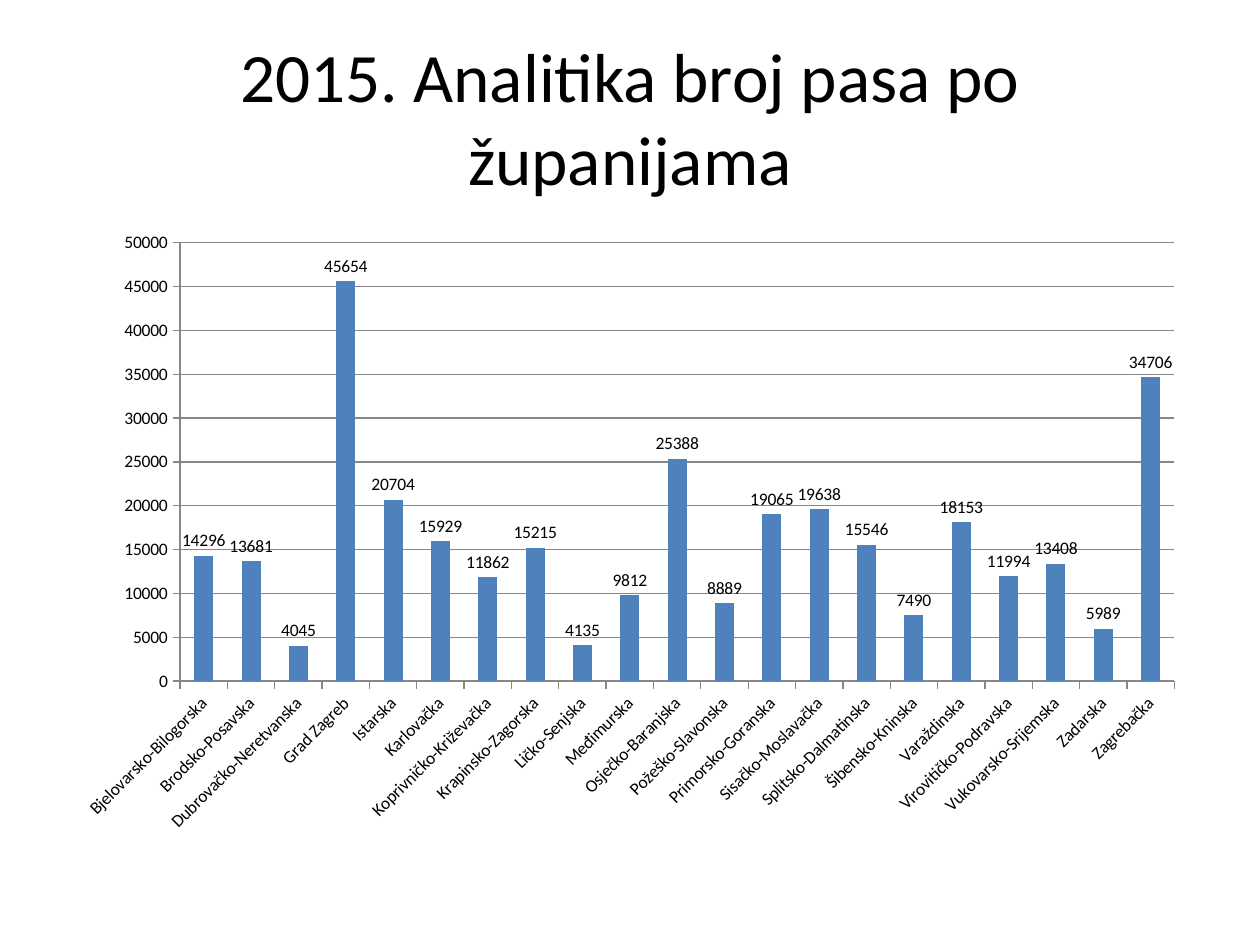
"""Build a slide charting the number of dogs by Croatian county in 2015."""
from typing import NamedTuple

import pptx
import pptx.chart.data
import pptx.dml.color
import pptx.enum.chart
import pptx.enum.text
import pptx.util

FONT_NAME = "Calibri"
TEXT_COLOR = "000000"
BAR_COLOR = "4F81BD"
LINE_COLOR = "878787"


class Box(NamedTuple):
    left: float
    top: float
    width: float
    height: float


class County(NamedTuple):
    name: str
    dogs: int


TITLE_BOX = Box(36, 21.6, 648, 90)
CHART_BOX = Box(36, 126, 648, 356.4)
COUNTIES = [
    County("Bjelovarsko-Bilogorska", 14296),
    County("Brodsko-Posavska", 13681),
    County("Dubrovačko-Neretvanska", 4045),
    County("Grad Zagreb", 45654),
    County("Istarska", 20704),
    County("Karlovačka", 15929),
    County("Koprivničko-Križevačka", 11862),
    County("Krapinsko-Zagorska", 15215),
    County("Ličko-Senjska", 4135),
    County("Međimurska", 9812),
    County("Osječko-Baranjska", 25388),
    County("Požeško-Slavonska", 8889),
    County("Primorsko-Goranska", 19065),
    County("Sisačko-Moslavačka", 19638),
    County("Splitsko-Dalmatinska", 15546),
    County("Šibensko-Kninska", 7490),
    County("Varaždinska", 18153),
    County("Virovitičko-Podravska", 11994),
    County("Vukovarsko-Srijemska", 13408),
    County("Zadarska", 5989),
    County("Zagrebačka", 34706),
]


def to_color(value: str) -> pptx.dml.color.RGBColor:
    return pptx.dml.color.RGBColor.from_string(value)


def to_points(box: Box) -> list[pptx.util.Pt]:
    return [pptx.util.Pt(length) for length in box]


def format_font(font, size: float, color: str = TEXT_COLOR) -> None:
    font.name = FONT_NAME
    font.size = pptx.util.Pt(size)
    font.color.rgb = to_color(color)


def format_line(line) -> None:
    line.color.rgb = to_color(LINE_COLOR)
    line.width = pptx.util.Pt(0.75)


def write_text(shape, text: str, *, size: float, color: str = TEXT_COLOR,
               alignment=pptx.enum.text.PP_ALIGN.CENTER) -> None:
    frame = shape.text_frame
    frame.word_wrap = True
    frame.auto_size = pptx.enum.text.MSO_AUTO_SIZE.NONE
    frame.vertical_anchor = pptx.enum.text.MSO_ANCHOR.MIDDLE
    paragraph = frame.paragraphs[0]
    paragraph.alignment = alignment
    run = paragraph.add_run()
    run.text = text
    format_font(run.font, size, color)


def add_county_chart(slide, box: Box, counties: list[County]) -> None:
    data = pptx.chart.data.CategoryChartData(number_format="General")
    data.categories = [county.name for county in counties]
    data.add_series("Series 1", [county.dogs for county in counties])
    chart = slide.shapes.add_chart(
        pptx.enum.chart.XL_CHART_TYPE.COLUMN_CLUSTERED, *to_points(box), data
    ).chart
    chart.has_title = False
    chart.has_legend = False
    format_font(chart.font, 10)

    plot = chart.plots[0]
    plot.gap_width = 150
    plot.vary_by_categories = False
    fill = plot.series[0].format.fill
    fill.solid()
    fill.fore_color.rgb = to_color(BAR_COLOR)
    plot.has_data_labels = True
    labels = plot.data_labels
    labels.show_value = True
    labels.position = pptx.enum.chart.XL_LABEL_POSITION.OUTSIDE_END
    format_font(labels.font, 10)

    for axis in (chart.category_axis, chart.value_axis):
        axis.major_tick_mark = pptx.enum.chart.XL_TICK_MARK.OUTSIDE
        axis.minor_tick_mark = pptx.enum.chart.XL_TICK_MARK.NONE
        format_font(axis.tick_labels.font, 10)
        format_line(axis.format.line)
    chart.category_axis.has_major_gridlines = False
    value_axis = chart.value_axis
    value_axis.minimum_scale = 0
    value_axis.maximum_scale = 50000
    value_axis.major_unit = 5000
    value_axis.has_major_gridlines = True
    format_line(value_axis.major_gridlines.format.line)


def main() -> None:
    presentation = pptx.Presentation()
    presentation.slide_width = pptx.util.Pt(720)
    presentation.slide_height = pptx.util.Pt(540)
    slide = presentation.slides.add_slide(presentation.slide_layouts[5])
    title = slide.shapes.title
    title.left, title.top, title.width, title.height = to_points(TITLE_BOX)
    write_text(title, "2015. Analitika broj pasa po županijama", size=39.6)
    add_county_chart(slide, CHART_BOX, COUNTIES)
    presentation.save("out.pptx")


if __name__ == "__main__":
    main()
